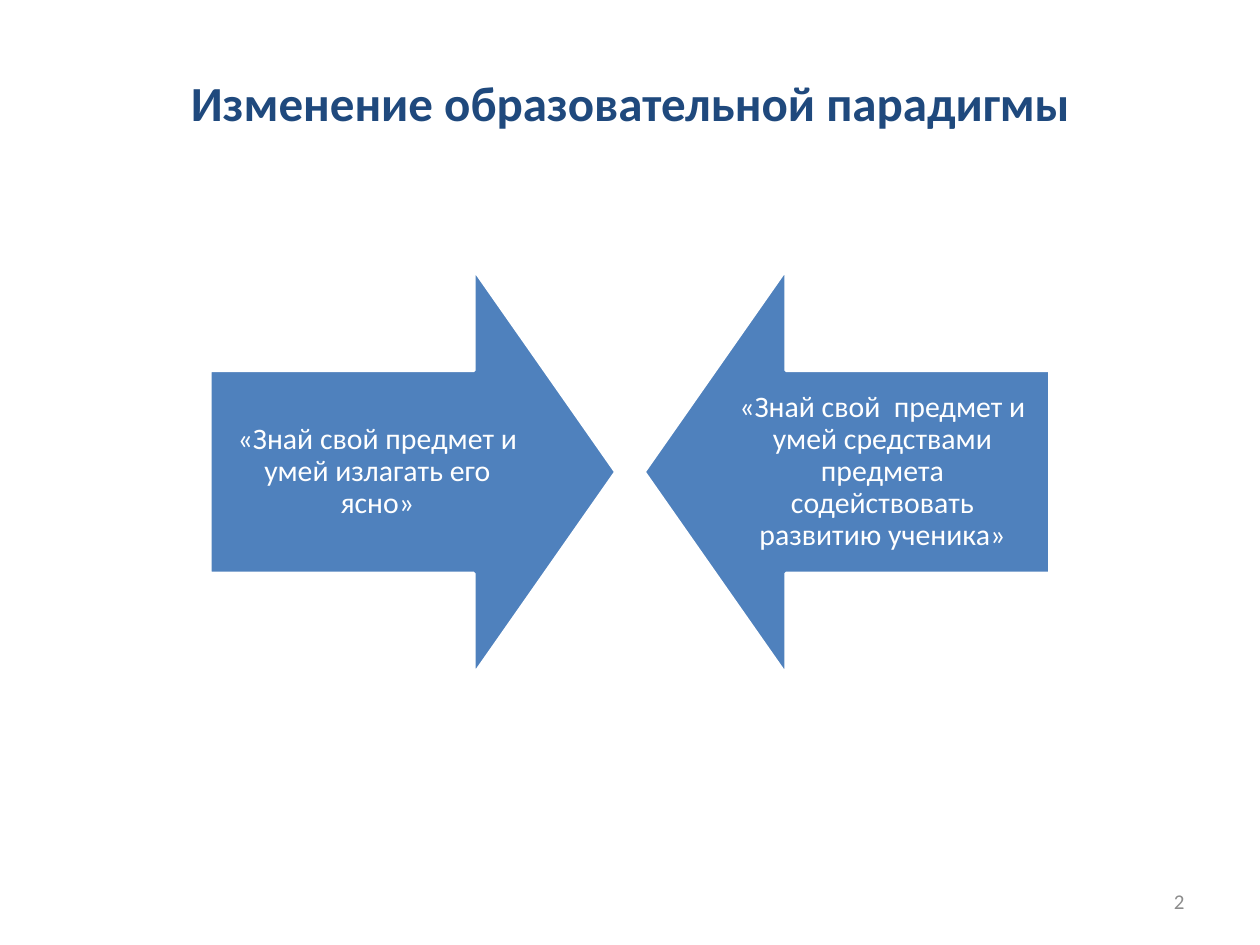
from pptx import Presentation
from pptx.dml.color import RGBColor
from pptx.enum.shapes import MSO_SHAPE
from pptx.enum.text import MSO_ANCHOR, PP_ALIGN
from pptx.util import Emu, Pt

RIGHT_ARROW, LEFT_ARROW = MSO_SHAPE.RIGHT_ARROW, MSO_SHAPE.LEFT_ARROW
TOP, MIDDLE = MSO_ANCHOR.TOP, MSO_ANCHOR.MIDDLE
CENTER, RIGHT = PP_ALIGN.CENTER, PP_ALIGN.RIGHT
EMU_PER_PX = 914400 / 126
PAGE_WIDTH, PAGE_HEIGHT = 1260, 945


def px(length):
    return Emu(round(length * EMU_PER_PX))


def color(hex_code):
    return RGBColor.from_string(hex_code)


def write(shape, text, size, hex_code, align, anchor, bold=False):
    frame = shape.text_frame
    frame.word_wrap = True
    frame.vertical_anchor = anchor
    para = frame.paragraphs[0]
    para.text = text
    para.alignment = align
    para.font.name = "Calibri"
    para.font.size = Pt(size)
    para.font.bold = bold
    para.font.color.rgb = color(hex_code)
    return frame


def add_label(page, box, *style, **options):
    label = page.shapes.add_textbox(*map(px, box))
    write(label, *style, **options)


def add_arrow(page, kind, box, text):
    arrow = page.shapes.add_shape(kind, *map(px, box))
    arrow.shadow.inherit = False
    arrow.adjustments[0] = 0.5
    arrow.adjustments[1] = 0.35
    arrow.fill.solid()
    arrow.fill.fore_color.rgb = color("4F81BD")
    arrow.line.color.rgb = color("FFFFFF")
    arrow.line.width = Pt(2)
    frame = write(arrow, text, 17, "FFFFFF", CENTER, MIDDLE)
    frame.margin_left = frame.margin_right = px(16)
    frame.margin_top = frame.margin_bottom = px(16)
    frame.paragraphs[0].line_spacing = 0.9


def add_facing_arrows(page, box, left_text, right_text):
    """Two square arrows at the sides of the box, pointing at each other."""
    left, top, width, height = box
    add_arrow(page, RIGHT_ARROW, (left, top, height, height), left_text)
    add_arrow(page, LEFT_ARROW, (left + width - height, top, height, height),
              right_text)


def main():
    deck = Presentation()
    deck.slide_width, deck.slide_height = px(PAGE_WIDTH), px(PAGE_HEIGHT)
    page = deck.slides.add_slide(deck.slide_layouts[6])
    add_label(page, (55, 66, 1150, 72), "Изменение образовательной парадигмы",
              28, "1F497D", CENTER, TOP, bold=True)
    add_facing_arrows(
        page, (210, 269, 840, 406),
        "«Знай свой предмет и умей излагать его ясно»",
        "«Знай свой  предмет и умей средствами предмета "
        "содействовать развитию ученика»")
    add_label(page, (903, 876, 294, 50), "2", 12, "8C8C8C", RIGHT, MIDDLE)
    deck.save("out.pptx")


if __name__ == "__main__":
    main()
